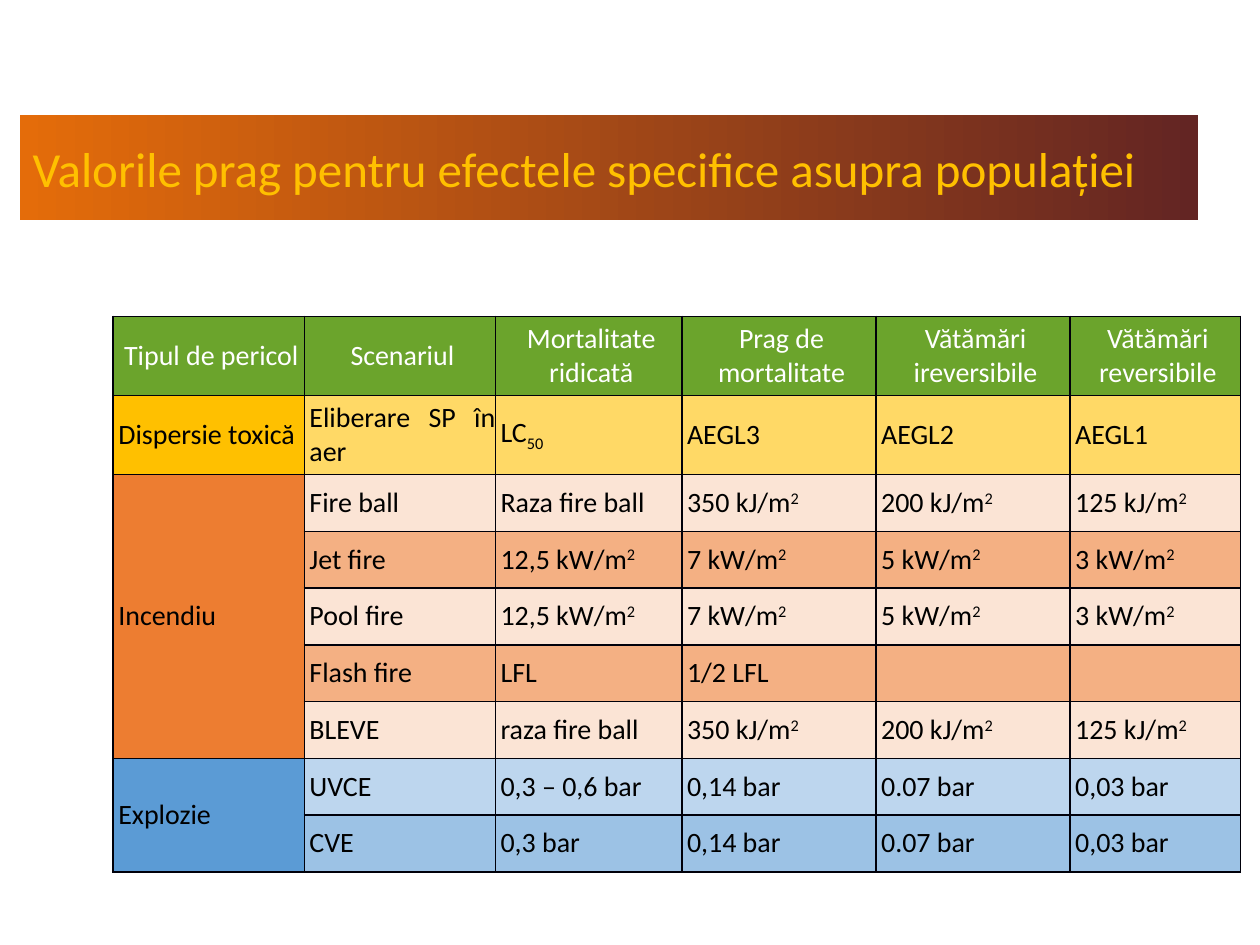
from lxml.etree import SubElement
from pptx import Presentation
from pptx.dml.color import RGBColor
from pptx.enum.shapes import MSO_SHAPE
from pptx.enum.text import MSO_ANCHOR, PP_ALIGN
from pptx.oxml.ns import qn
from pptx.util import Pt

FONT = "Calibri"
BORDER = "00000A"
BASELINES = {"^": "30000", "_": "-25000"}
COL_WIDTHS = [109.2, 109.2, 106.6, 110.9, 110.9, 97.4]
ROW_HEIGHTS = [45.2] * 2 + [32.45] * 7
HEADER = ["Tipul de pericol", "Scenariul", "Mortalitate ridicată",
          "Prag de mortalitate", "Vătămări ireversibile", "Vătămări reversibile"]
HAZARDS = [
    ("Dispersie toxică", "FFC000", ["FFD966"], [
        ["Eliberare SP în aer", "LC_50", "AEGL3", "AEGL2", "AEGL1"],
    ]),
    ("Incendiu", "ED7D31", ["FBE4D5", "F4B083"], [
        ["Fire ball", "Raza fire ball", "350 kJ/m^2", "200 kJ/m^2", "125 kJ/m^2"],
        ["Jet fire", "12,5 kW/m^2", "7 kW/m^2", "5 kW/m^2", "3 kW/m^2"],
        ["Pool fire", "12,5 kW/m^2", "7 kW/m^2", "5 kW/m^2", "3 kW/m^2"],
        ["Flash fire", "LFL", "1/2 LFL", "", ""],
        ["BLEVE", "raza fire ball", "350 kJ/m^2", "200 kJ/m^2", "125 kJ/m^2"],
    ]),
    ("Explozie", "5B9BD5", ["BDD6EE", "9CC2E5"], [
        ["UVCE", "0,3 – 0,6 bar", "0,14 bar", "0.07 bar", "0,03 bar"],
        ["CVE", "0,3 bar", "0,14 bar", "0.07 bar", "0,03 bar"],
    ]),
]


def rgb(color):
    return RGBColor.from_string(color)


def add_run(p, text, size, color):
    r = p.add_run()
    r.text = text
    r.font.name = FONT
    r.font.size = Pt(size)
    r.font.color.rgb = rgb(color)
    return r


def add_title(s, left, top, width, height):
    sp = s.shapes.add_shape(MSO_SHAPE.RECTANGLE, Pt(left), Pt(top), Pt(width), Pt(height))
    sp.shadow.inherit = False
    sp.line.fill.background()
    sp.fill.gradient()
    sp.fill.gradient_angle = 180
    for stop, color in zip(sp.fill.gradient_stops, ["632523", "E46C0A"]):
        stop.color.rgb = rgb(color)
    tf = sp.text_frame
    tf.word_wrap = True
    tf.vertical_anchor = MSO_ANCHOR.MIDDLE
    p = tf.paragraphs[0]
    p.alignment = PP_ALIGN.LEFT
    add_run(p, "Valorile prag pentru efectele specifice asupra populației", 28, "FFC000")


def set_borders(cell):
    tcPr = cell._tc.get_or_add_tcPr()
    for side in ("lnL", "lnR", "lnT", "lnB"):
        ln = SubElement(tcPr, qn(f"a:{side}"), w=str(Pt(1)))
        fill = SubElement(ln, qn("a:solidFill"))
        SubElement(fill, qn("a:srgbClr"), val=BORDER)


def fill_cell(cell, text, fill, color="000000", align=PP_ALIGN.JUSTIFY):
    set_borders(cell)
    cell.fill.solid()
    cell.fill.fore_color.rgb = rgb(fill)
    cell.vertical_anchor = MSO_ANCHOR.MIDDLE
    cell.margin_left = Pt(3)
    cell.margin_right = cell.margin_top = cell.margin_bottom = 0
    p = cell.text_frame.paragraphs[0]
    p.alignment = align
    mark = next((m for m in BASELINES if m in text), None)
    base, _, script = text.partition(mark) if mark else (text, "", "")
    if base:
        add_run(p, base, 16, color)
    if script:
        r = add_run(p, script, 16, color)
        r._r.get_or_add_rPr().set("baseline", BASELINES[mark])


def add_thresholds(s, left, top):
    table = s.shapes.add_table(len(ROW_HEIGHTS), len(COL_WIDTHS), Pt(left), Pt(top),
                               Pt(sum(COL_WIDTHS)), Pt(sum(ROW_HEIGHTS))).table
    for col, width in zip(table.columns, COL_WIDTHS):
        col.width = Pt(width)
    for row, height in zip(table.rows, ROW_HEIGHTS):
        row.height = Pt(height)
    for j, text in enumerate(HEADER):
        fill_cell(table.cell(0, j), text, "6BA42C", "FFFFFF", PP_ALIGN.CENTER)
    first = 1
    for hazard, hazard_fill, bands, scenarios in HAZARDS:
        for k, values in enumerate(scenarios):
            fill_cell(table.cell(first + k, 0), "" if k else hazard, hazard_fill)
            for j, text in enumerate(values, 1):
                fill_cell(table.cell(first + k, j), text, bands[k % len(bands)])
        if len(scenarios) > 1:
            table.cell(first, 0).merge(table.cell(first + len(scenarios) - 1, 0))
        first += len(scenarios)


def main():
    prs = Presentation()
    prs.slide_width, prs.slide_height = Pt(720), Pt(540)
    s = prs.slides.add_slide(prs.slide_layouts[6])
    add_title(s, 11.5, 65.6, 673.2, 60.3)
    add_thresholds(s, 64.7, 180.8)
    prs.save("out.pptx")


if __name__ == "__main__":
    main()
